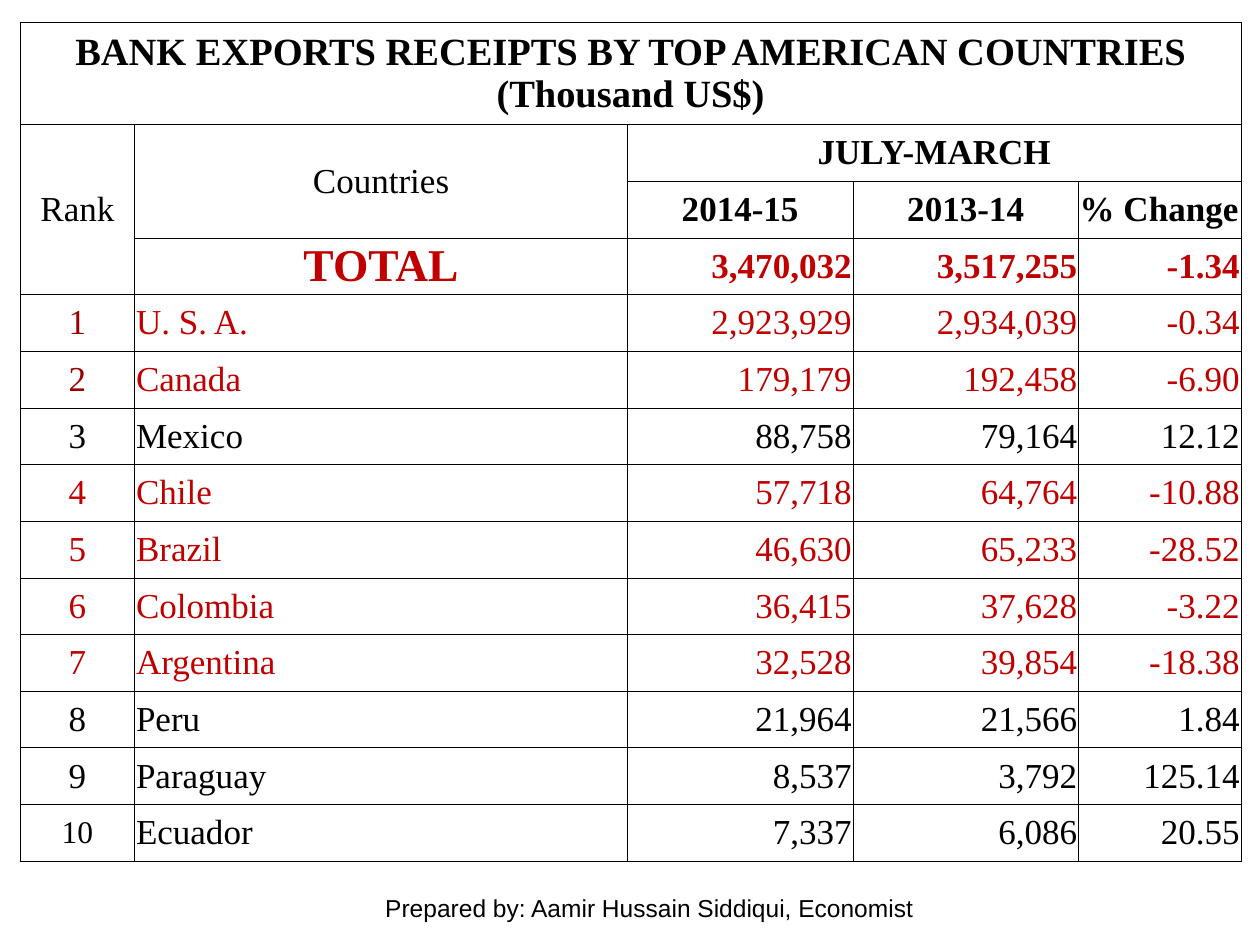
from lxml import etree
from pptx import Presentation
from pptx import util as u
from pptx.dml.color import RGBColor
from pptx.enum import text
from pptx.oxml import ns

COLORS = {"black": "000000", "white": "FFFFFF", "red": "C00000", "dark_red": "990000"}
SERIF, SANS = "Times New Roman", "Arial"
LEFT, CENTER, RIGHT = text.PP_ALIGN.LEFT, text.PP_ALIGN.CENTER, text.PP_ALIGN.RIGHT

COL_WIDTHS = [0.91, 3.91, 1.79, 1.79, 1.29]
TITLE_HEIGHT = 0.81
TITLE = "BANK EXPORTS RECEIPTS BY TOP AMERICAN COUNTRIES (Thousand US$)"
MERGES = [((0, 0), (0, 4)), ((1, 0), (3, 0)), ((1, 1), (2, 1)), ((1, 2), (1, 4))]
PERIODS = ["2014-15", "2013-14", "% Change"]
TOTALS = ["3,470,032", "3,517,255", "-1.34"]
COUNTRIES = [
    ("U. S. A.", "2,923,929", "2,934,039", "-0.34"),
    ("Canada", "179,179", "192,458", "-6.90"),
    ("Mexico", "88,758", "79,164", "12.12"),
    ("Chile", "57,718", "64,764", "-10.88"),
    ("Brazil", "46,630", "65,233", "-28.52"),
    ("Colombia", "36,415", "37,628", "-3.22"),
    ("Argentina", "32,528", "39,854", "-18.38"),
    ("Peru", "21,964", "21,566", "1.84"),
    ("Paraguay", "8,537", "3,792", "125.14"),
    ("Ecuador", "7,337", "6,086", "20.55"),
]
FIRST_COUNTRY_ROW = 4


def style_paragraph(p, value, size, color="black", bold=False, align=LEFT, font=SERIF):
    p.text = value
    p.alignment = align
    p.font.name = font
    p.font.size = u.Pt(size)
    p.font.bold = bold
    p.font.color.rgb = RGBColor.from_string(COLORS[color])


def frame_cell(cell):
    tc_pr = cell._tc.get_or_add_tcPr()
    for side in ("lnL", "lnR", "lnT", "lnB"):
        ln = etree.SubElement(tc_pr, ns.qn(f"a:{side}"), w=str(u.Pt(0.5)))
        fill = etree.SubElement(ln, ns.qn("a:solidFill"))
        etree.SubElement(fill, ns.qn("a:srgbClr"), val=COLORS["black"])
    cell.fill.solid()
    cell.fill.fore_color.rgb = RGBColor.from_string(COLORS["white"])
    cell.vertical_anchor = text.MSO_ANCHOR.MIDDLE
    cell.margin_left = cell.margin_right = u.Inches(0.01)
    cell.margin_top = cell.margin_bottom = 0


def add_exports_table(s, left, top, width, height):
    n_rows = FIRST_COUNTRY_ROW + len(COUNTRIES)
    table = s.shapes.add_table(
        n_rows, len(COL_WIDTHS),
        u.Inches(left), u.Inches(top), u.Inches(width), u.Inches(height),
    ).table
    table.first_row = table.horz_banding = False
    for column, share in zip(table.columns, COL_WIDTHS):
        column.width = u.Inches(width * share / sum(COL_WIDTHS))
    for i, row in enumerate(table.rows):
        row.height = u.Inches((height - TITLE_HEIGHT) / (n_rows - 1) if i else TITLE_HEIGHT)
    for cell in table.iter_cells():
        frame_cell(cell)
    for first, last in MERGES:
        table.cell(*first).merge(table.cell(*last))

    def put(row, col, value, size=20, **style):
        style_paragraph(table.cell(row, col).text_frame.paragraphs[0], value, size, **style)

    put(0, 0, TITLE, 22, bold=True, align=CENTER)
    put(1, 0, "Rank", align=CENTER)
    put(1, 1, "Countries", align=CENTER)
    put(1, 2, "JULY-MARCH", bold=True, align=CENTER)
    put(3, 1, "TOTAL", 26, color="red", bold=True, align=CENTER)
    for col, (period, total) in enumerate(zip(PERIODS, TOTALS), 2):
        put(2, col, period, bold=True, align=LEFT if period == "% Change" else CENTER)
        put(3, col, total, color="red", bold=True, align=RIGHT)

    for rank, (country, *values) in enumerate(COUNTRIES, 1):
        row = FIRST_COUNTRY_ROW + rank - 1
        color = "red" if values[-1].startswith("-") else "black"
        put(row, 0, str(rank), 18 if rank == 10 else 20,
            color="dark_red" if rank <= 2 else color, align=CENTER)
        put(row, 1, country, color=color)
        for col, value in enumerate(values, 2):
            put(row, col, value, color=color, align=RIGHT)


def add_credit(s, left, top, width, height):
    tf = s.shapes.add_textbox(
        u.Inches(left), u.Inches(top), u.Inches(width), u.Inches(height)
    ).text_frame
    tf.word_wrap = True
    style_paragraph(tf.paragraphs[0], "Prepared by: Aamir Hussain Siddiqui, Economist",
                    14, align=CENTER, font=SANS)


def main():
    prs = Presentation()
    prs.slide_width, prs.slide_height = u.Inches(10), u.Inches(7.5)
    s = prs.slides.add_slide(prs.slide_layouts[6])
    add_exports_table(s, 0.16, 0.18, 9.69, 6.66)
    add_credit(s, 2.64, 7.04, 5.03, 0.26)
    prs.save("out.pptx")


if __name__ == "__main__":
    main()
